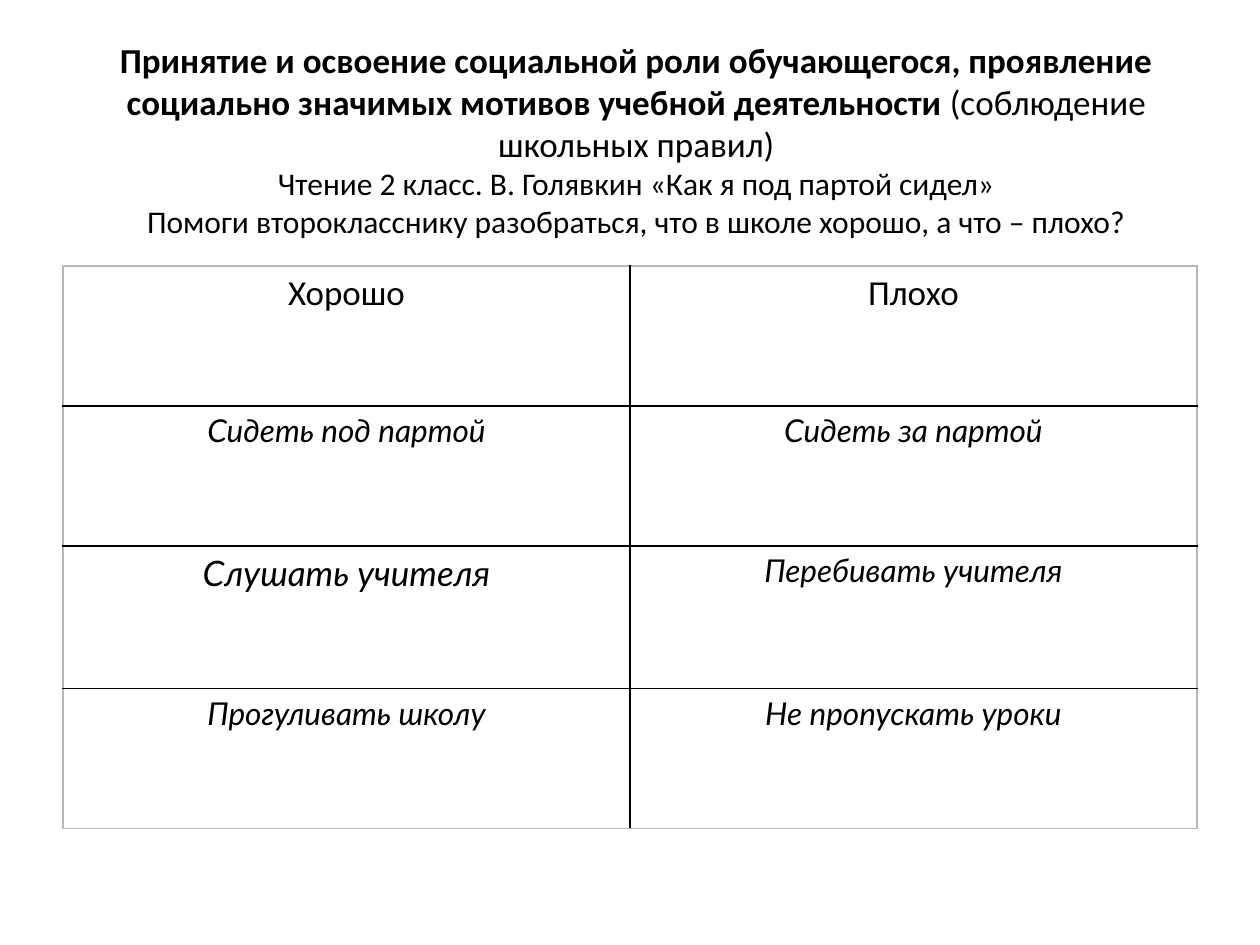
from lxml import etree
from pptx import Presentation
from pptx.dml.color import RGBColor
from pptx.enum.text import MSO_ANCHOR, MSO_AUTO_SIZE, PP_ALIGN
from pptx.oxml.ns import qn
from pptx.util import Pt

CENTER = PP_ALIGN.CENTER
MIDDLE = MSO_ANCHOR.MIDDLE
TOP = MSO_ANCHOR.TOP
NO_AUTOFIT = MSO_AUTO_SIZE.NONE

BLACK = RGBColor(0x00, 0x00, 0x00)
GREY = RGBColor(0xB8, 0xB8, 0xB8)

TITLE_FONT = "Calibri"
ANSWER_FONT = "Lato"
TITLE_LAYOUT = 5

TITLE_RUNS = [
    ("Принятие и освоение социальной роли обучающегося, проявление "
     "социально значимых мотивов учебной деятельности ", 20, True),
    ("(соблюдение школьных правил)\n", 20, False),
    ("Чтение 2 класс. В. Голявкин «Как я под партой сидел»\n"
     "Помоги второкласснику разобраться, что в школе хорошо, а что – плохо?", 18, False),
]

HEADINGS = ["Хорошо", "Плохо"]
ANSWERS = [
    [("Сидеть под партой", 18), ("Сидеть за партой", 18)],
    [("Слушать учителя", 20), ("Перебивать учителя", 18)],
    [("Прогуливать школу", 18), ("Не пропускать уроки", 18)],
]
ROW_HEIGHTS = [80, 80, 81.5, 80]


def add_text(paragraph, text, size, font=TITLE_FONT, bold=False, italic=False, spacing=1.0):
    paragraph.alignment = CENTER
    paragraph.line_spacing = spacing
    for index, line in enumerate(text.split("\n")):
        if index:
            paragraph.add_line_break()
        if line:
            run = paragraph.add_run()
            run.text = line
            run.font.name = font
            run.font.size = Pt(size)
            run.font.bold = bold
            run.font.italic = italic
            run.font.color.rgb = BLACK


def set_borders(cell, colors):
    properties = cell._tc.get_or_add_tcPr()
    for index, (side, color) in enumerate(colors.items()):
        line = etree.Element(qn(f"a:ln{side}"), w=str(Pt(1)))
        fill = etree.SubElement(line, qn("a:solidFill"))
        etree.SubElement(fill, qn("a:srgbClr"), val=str(color))
        properties.insert(index, line)


def add_title(slide, left, top, width, height):
    title = slide.shapes.title
    title.left, title.top = Pt(left), Pt(top)
    title.width, title.height = Pt(width), Pt(height)
    frame = title.text_frame
    frame.word_wrap = True
    frame.auto_size = NO_AUTOFIT
    frame.vertical_anchor = MIDDLE
    for text, size, bold in TITLE_RUNS:
        add_text(frame.paragraphs[0], text, size, bold=bold)


def add_answer_table(slide, left, top, width):
    row_count, column_count = len(ANSWERS) + 1, len(HEADINGS)
    table = slide.shapes.add_table(row_count, column_count, Pt(left), Pt(top),
                                   Pt(width), Pt(sum(ROW_HEIGHTS))).table
    table.first_row = False
    table.horz_banding = False
    for column in table.columns:
        column.width = Pt(width / column_count)
    for row, height in zip(table.rows, ROW_HEIGHTS):
        row.height = Pt(height)

    for column, heading in enumerate(HEADINGS):
        add_text(table.cell(0, column).text_frame.paragraphs[0], heading, 20)
    for row, answers in enumerate(ANSWERS, start=1):
        for column, (text, size) in enumerate(answers):
            cell = table.cell(row, column)
            cell.margin_left = cell.margin_right = Pt(5)
            cell.margin_top = cell.margin_bottom = 0
            add_text(cell.text_frame.paragraphs[0], text, size,
                     font=ANSWER_FONT, italic=True, spacing=1.15)

    for row in range(row_count):
        for column in range(column_count):
            cell = table.cell(row, column)
            cell.vertical_anchor = TOP
            cell.fill.background()
            set_borders(cell, {
                "L": GREY if column == 0 else BLACK,
                "R": GREY if column == column_count - 1 else BLACK,
                "T": GREY if row == 0 else BLACK,
                "B": GREY if row == row_count - 1 else BLACK,
            })


def main():
    presentation = Presentation()
    presentation.slide_width = Pt(720)
    presentation.slide_height = Pt(540)
    slide = presentation.slides.add_slide(presentation.slide_layouts[TITLE_LAYOUT])
    add_title(slide, left=39.6, top=34, width=648, height=90.7)
    add_answer_table(slide, left=36, top=152, width=648)
    presentation.save("out.pptx")


if __name__ == "__main__":
    main()
